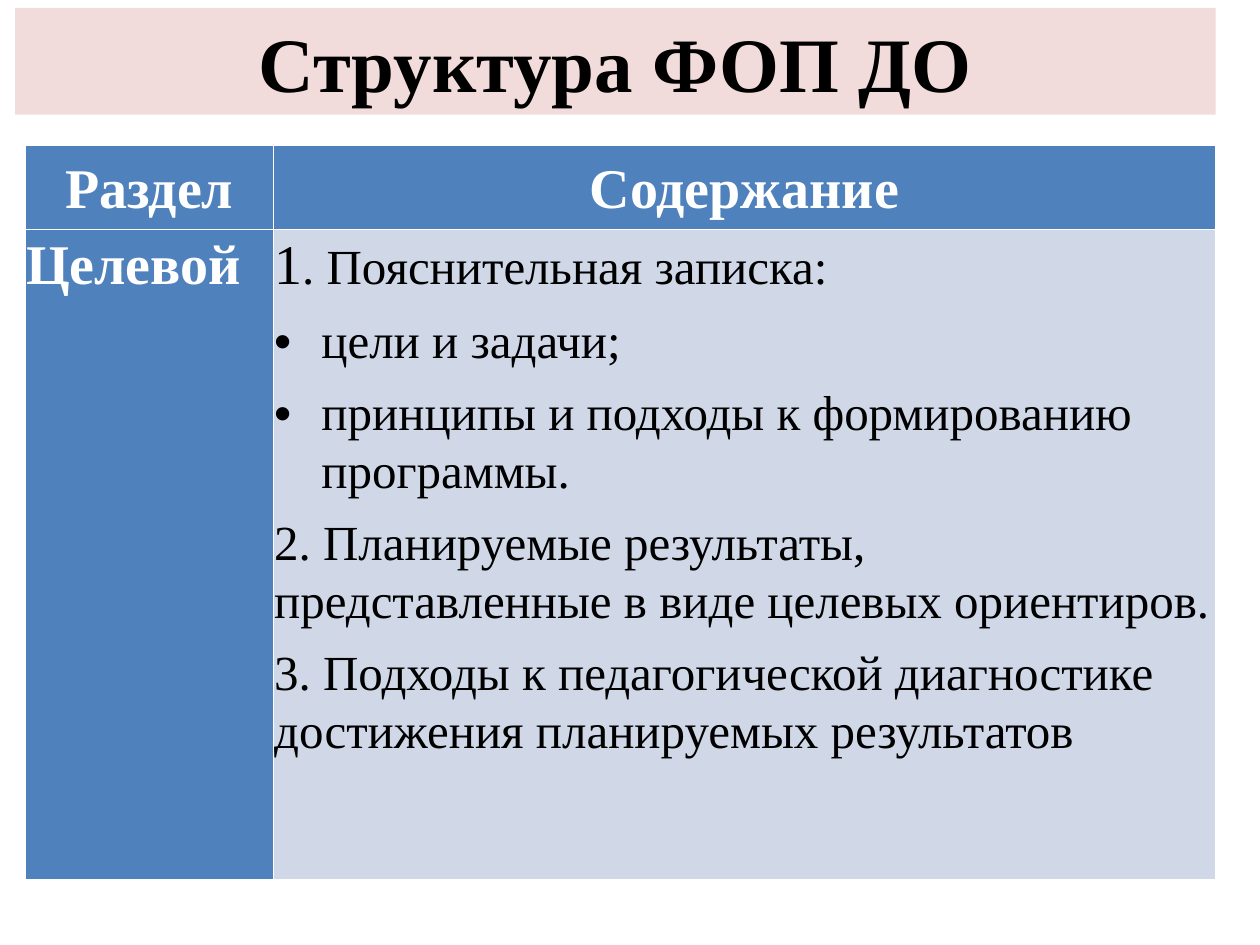
"""Build a slide with a title band and a table of programme sections."""
from lxml import etree
from pptx import Presentation
from pptx.dml.color import RGBColor
from pptx.enum.shapes import MSO_SHAPE
from pptx.enum.text import MSO_ANCHOR, PP_ALIGN
from pptx.oxml.ns import qn
from pptx.util import Pt

RECT = MSO_SHAPE.RECTANGLE
MIDDLE, TOP = MSO_ANCHOR.MIDDLE, MSO_ANCHOR.TOP
CENTER, LEFT = PP_ALIGN.CENTER, PP_ALIGN.LEFT
FACE = "Times New Roman"
PINK = RGBColor(0xF2, 0xDC, 0xDB)
BLUE = RGBColor(0x4F, 0x81, 0xBD)
PALE = RGBColor(0xD0, 0xD8, 0xE8)
WHITE = RGBColor(0xFF, 0xFF, 0xFF)
BLACK = RGBColor(0, 0, 0)

TITLE = "Структура ФОП ДО"
HEADS = ["Раздел", "Содержание"]
PART = "Целевой"
ITEMS = [
    ("1. Пояснительная записка:", False),
    ("цели и задачи;", True),
    ("принципы и подходы к формированию программы.", True),
    ("2. Планируемые результаты, представленные в виде целевых ориентиров.", False),
    ("3. Подходы к педагогической диагностике достижения планируемых результатов", False),
]
COLS = [141.8, 538.6]
ROWS = [48.2, 371.5]
INDENT = 27


def style(para, size, color, bold, align):
    font = para.font
    font.name, font.size, font.bold = FACE, Pt(size), bold
    font.color.rgb = color
    para.alignment = align


def paint(cell, fill, anchor):
    cell.fill.solid()
    cell.fill.fore_color.rgb = fill
    cell.vertical_anchor = anchor
    cell.margin_left = cell.margin_right = Pt(0.5)
    cell.margin_top = cell.margin_bottom = Pt(0.5)


def label(cell, text, anchor, align):
    paint(cell, BLUE, anchor)
    para = cell.text_frame.paragraphs[0]
    para.text = text
    para.line_spacing = 1.07
    style(para, 32, WHITE, True, align)


def bullet(para):
    props = para._p.get_or_add_pPr()
    props.set("marL", str(Pt(INDENT)))
    props.set("indent", str(-Pt(INDENT)))
    font = etree.Element(qn("a:buFont"), typeface="Arial")
    mark = etree.Element(qn("a:buChar"), char="•")
    spot = props.find(qn("a:defRPr"))
    spot.addprevious(font)
    spot.addprevious(mark)


def add_title(slide):
    band = slide.shapes.add_shape(RECT, Pt(8.6), Pt(4.5), Pt(686), Pt(61))
    band.shadow.inherit = False
    band.fill.solid()
    band.fill.fore_color.rgb = PINK
    band.line.fill.background()
    frame = band.text_frame
    frame.vertical_anchor = MIDDLE
    para = frame.paragraphs[0]
    para.text = TITLE
    style(para, 44, BLACK, True, CENTER)


def add_items(cell):
    paint(cell, PALE, TOP)
    frame = cell.text_frame
    for num, (text, dot) in enumerate(ITEMS):
        para = frame.add_paragraph() if num else frame.paragraphs[0]
        style(para, 28, BLACK, False, LEFT)
        para.line_spacing = 1.07
        para.space_after = Pt(8)
        if num == 0:
            lead = para.add_run()
            lead.text, text = text[0], text[1:]
            lead.font.size = Pt(32)
        para.add_run().text = text
        if dot:
            bullet(para)


def add_grid(slide):
    frame = slide.shapes.add_table(
        2, 2, Pt(14.4), Pt(83), Pt(sum(COLS)), Pt(sum(ROWS)))
    table = frame.table
    table.first_col = True
    for col, width in zip(table.columns, COLS):
        col.width = Pt(width)
    for row, height in zip(table.rows, ROWS):
        row.height = Pt(height)
    for num, head in enumerate(HEADS):
        label(table.cell(0, num), head, MIDDLE, CENTER)
    label(table.cell(1, 0), PART, TOP, LEFT)
    add_items(table.cell(1, 1))


def main():
    deck = Presentation()
    deck.slide_width, deck.slide_height = Pt(720), Pt(540)
    slide = deck.slides.add_slide(deck.slide_layouts[6])
    add_title(slide)
    add_grid(slide)
    deck.save("out.pptx")


if __name__ == "__main__":
    main()
